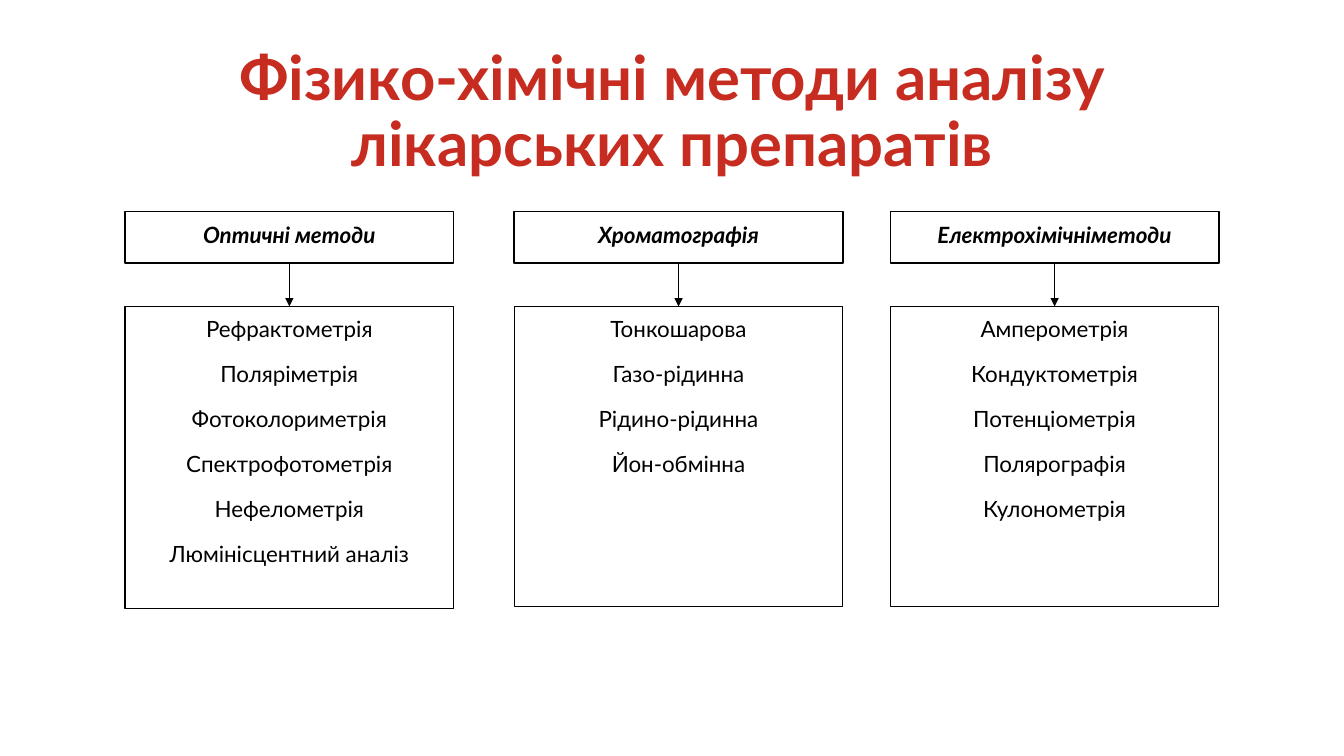
from lxml import etree
from pptx import Presentation
from pptx.dml.color import RGBColor
from pptx.enum.shapes import MSO_CONNECTOR, MSO_SHAPE
from pptx.enum.text import MSO_ANCHOR, PP_ALIGN
from pptx.oxml.ns import qn
from pptx.util import Inches, Pt

COLORS = {"title": "C72C21", "ink": "000000", "paper": "FFFFFF"}
FONT = "Lato"
BOX_WIDTH = 3.26
METHODS = [
    (1.24, 3.0, "Оптичні методи",
     ["Рефрактометрія", "Поляріметрія", "Фотоколориметрія",
      "Спектрофотометрія", "Нефелометрія", "Люмінісцентний аналіз"]),
    (5.1, 2.98, "Хроматографія",
     ["Тонкошарова", "Газо-рідинна", "Рідино-рідинна", "Йон-обмінна"]),
    (8.83, 2.98, "Електрохімічніметоди",
     ["Амперометрія", "Кондуктометрія", "Потенціометрія",
      "Полярографія", "Кулонометрія"]),
]


def write_lines(frame, lines, size, color, spacing, after=0, bold=False, italic=False):
    frame.word_wrap = True
    for index, line in enumerate(lines):
        paragraph = frame.paragraphs[0] if index == 0 else frame.add_paragraph()
        paragraph.text = line
        paragraph.alignment = PP_ALIGN.CENTER
        paragraph.line_spacing = spacing
        paragraph.space_after = Pt(after)
        paragraph.font.name = FONT
        paragraph.font.size = Pt(size)
        paragraph.font.bold = bold
        paragraph.font.italic = italic
        paragraph.font.color.rgb = RGBColor.from_string(COLORS[color])


def add_box(left, top, height, border, lines, emphasis=False):
    box = slide.shapes.add_shape(MSO_SHAPE.RECTANGLE, Inches(left), Inches(top),
                                 Inches(BOX_WIDTH), Inches(height))
    box.shadow.inherit = False
    box.fill.solid()
    box.fill.fore_color.rgb = RGBColor.from_string(COLORS["paper"])
    box.line.color.rgb = RGBColor.from_string(COLORS["ink"])
    box.line.width = Pt(border)
    box.text_frame.vertical_anchor = MSO_ANCHOR.TOP
    write_lines(box.text_frame, lines, 16, "ink", 1.15, 10, emphasis, emphasis)
    return box


prs = Presentation()
prs.slide_width = Inches(13.33)
prs.slide_height = Inches(7.5)
slide = prs.slides.add_slide(prs.slide_layouts[6])

title = slide.shapes.add_textbox(Inches(0.92), Inches(0.4), Inches(11.5), Inches(1.45))
title.text_frame.vertical_anchor = MSO_ANCHOR.MIDDLE
write_lines(title.text_frame, ["Фізико-хімічні методи аналізу лікарських препаратів"],
            44, "title", 0.9, bold=True)

for left, list_height, group, techniques in METHODS:
    header = add_box(left, 2.1, 0.51, 1, [group], emphasis=True)
    technique_list = add_box(left, 3.04, list_height, 0.75, techniques)
    arrow = slide.shapes.add_connector(MSO_CONNECTOR.STRAIGHT, 0, 0, 0, 0)
    arrow.begin_connect(header, 2)
    arrow.end_connect(technique_list, 0)
    arrow.line.color.rgb = RGBColor.from_string(COLORS["ink"])
    arrow.line.width = Pt(0.25)
    etree.SubElement(arrow.line._get_or_add_ln(), qn("a:tailEnd"), type="triangle")
    etree.SubElement(arrow._element.spPr, qn("a:effectLst"))

prs.save("out.pptx")
